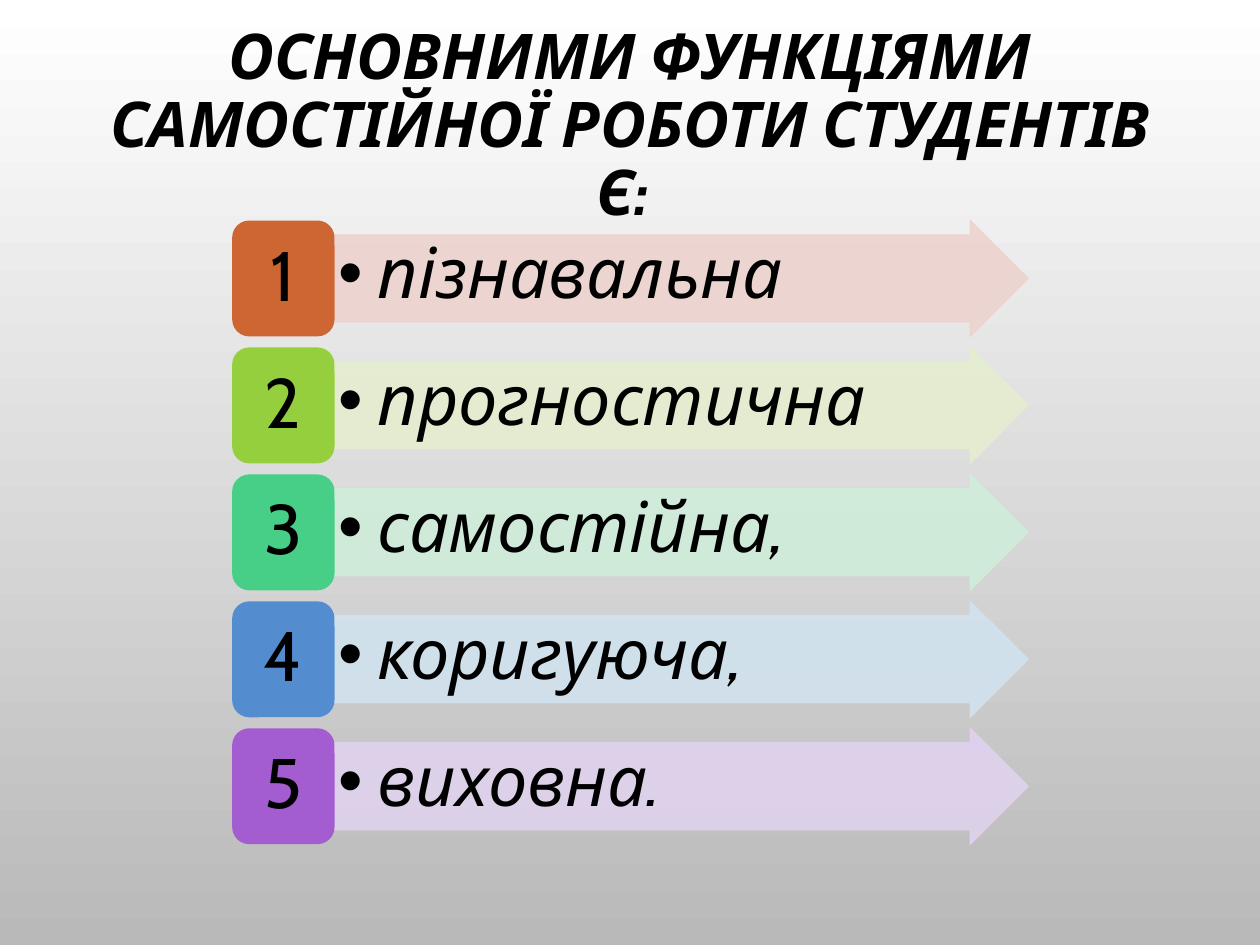
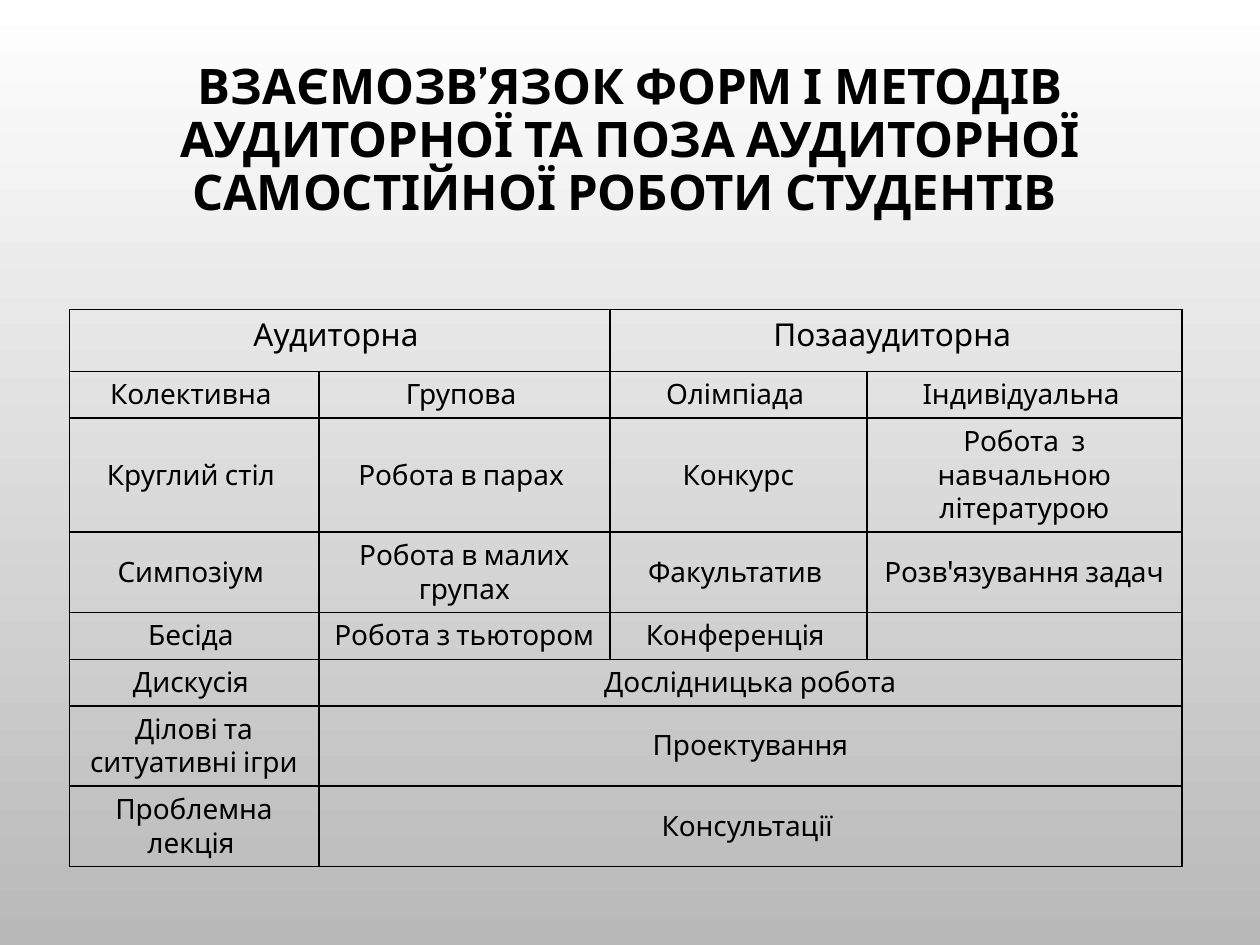
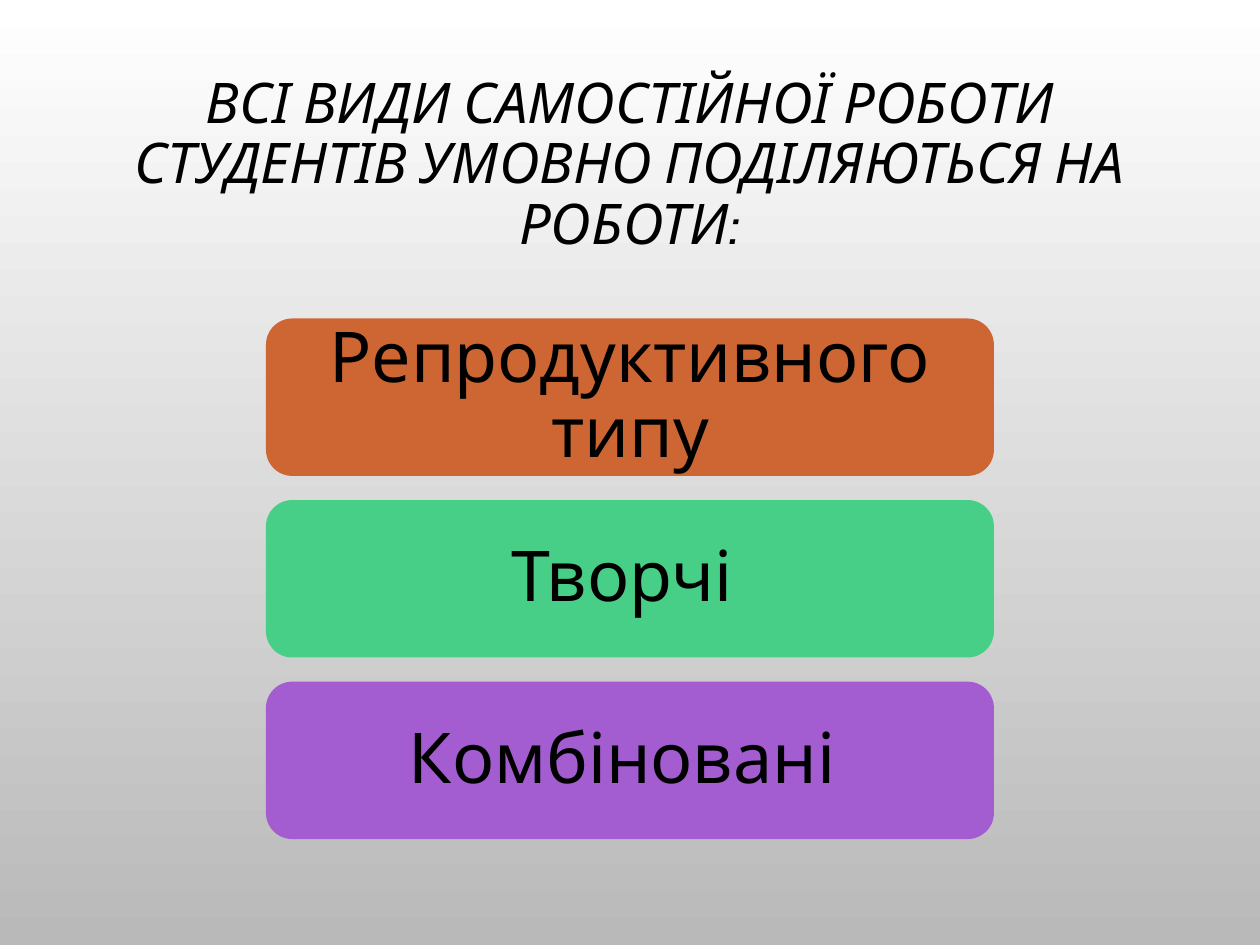
from collections import namedtuple

from lxml.etree import SubElement
from pptx import Presentation
from pptx.dml.color import RGBColor
from pptx.enum.shapes import MSO_SHAPE
from pptx.enum.text import MSO_ANCHOR, MSO_AUTO_SIZE, PP_ALIGN
from pptx.oxml.ns import qn
from pptx.util import Pt

Box = namedtuple("Box", "left top width height")

BLACK = RGBColor(0x00, 0x00, 0x00)
WHITE = RGBColor(0xFF, 0xFF, 0xFF)
GREY = RGBColor(0xB9, 0xB9, 0xB9)
ORANGE = RGBColor(0xCE, 0x66, 0x33)
LIME = RGBColor(0x95, 0xCF, 0x3E)
GREEN = RGBColor(0x48, 0xCF, 0x87)
BLUE = RGBColor(0x53, 0x8D, 0xD0)
PURPLE = RGBColor(0xA3, 0x5D, 0xD1)
PALE_ORANGE = RGBColor(0xED, 0xD3, 0xCE)
PALE_LIME = RGBColor(0xE5, 0xED, 0xCF)
PALE_GREEN = RGBColor(0xD0, 0xED, 0xDA)
PALE_BLUE = RGBColor(0xD1, 0xE2, 0xEE)
PALE_PURPLE = RGBColor(0xE0, 0xD2, 0xEE)

FONT = "Cabin"
TITLE_LAYOUT = 5
BULLET_INDENT = Pt(22.5)

FUNCTIONS = [
    ("пізнавальна", ORANGE, PALE_ORANGE),
    ("прогностична", LIME, PALE_LIME),
    ("самостійна,", GREEN, PALE_GREEN),
    ("коригуюча,", BLUE, PALE_BLUE),
    ("виховна.", PURPLE, PALE_PURPLE),
]
WORK_TYPES = [
    ("Репродуктивного типу", ORANGE),
    ("Творчі ", GREEN),
    ("Комбіновані ", PURPLE),
]
FORMS = [
    ["Аудиторна ", None, "Позааудиторна ", None],
    ["Колективна ", "Групова ", "Олімпіада ", "Індивідуальна "],
    ["Круглий стіл ", "Робота в парах ", "Конкурс", "Робота  з навчальною літературою"],
    ["Симпозіум ", "Робота в малих групах", "Факультатив ", "Розв'язування задач"],
    ["Бесіда ", "Робота з тьютором", "Конференція ", ""],
    ["Дискусія ", "Дослідницька робота", None, None],
    ["Ділові та ситуативні ігри", "Проектування", None, None],
    ["Проблемна лекція ", "Консультації ", None, None],
]
FORM_WIDTHS = [142.6, 166.3, 146.9, 180]
FORM_HEIGHTS = [35.3, 21.6, 35.3, 35.3, 21.6, 23.8, 35.3, 35.3]


def apply(target, **formats):
    for name, value in formats.items():
        setattr(target, name, value)


def points(box):
    return [Pt(length) for length in box]


def margins(across, down):
    return dict(margin_left=Pt(across), margin_right=Pt(across),
                margin_top=Pt(down), margin_bottom=Pt(down))


def write(frame, text, size, align=PP_ALIGN.CENTER, spacing=0.9, **style):
    paragraph = frame.paragraphs[0]
    apply(paragraph, alignment=align, line_spacing=spacing)
    run = paragraph.add_run()
    run.text = text
    apply(run.font, name=FONT, size=Pt(size), **style)
    run.font.color.rgb = BLACK


def add_block(slide, preset, box, color):
    block = slide.shapes.add_shape(preset, *points(box))
    block.shadow.inherit = False
    block.fill.solid()
    block.fill.fore_color.rgb = color
    block.line.fill.background()
    return block


def add_badge(slide, box, text, color, inset):
    badge = add_block(slide, MSO_SHAPE.ROUNDED_RECTANGLE, box, color)
    apply(badge.text_frame, word_wrap=True,
          vertical_anchor=MSO_ANCHOR.MIDDLE, **margins(12, inset))
    write(badge.text_frame, text, 40)


def add_function_arrow(slide, box, text, color):
    arrow = add_block(slide, MSO_SHAPE.RIGHT_ARROW, box, color)
    arrow.adjustments[0] = 0.75
    arrow.line.color.rgb = color
    arrow.line.width = Pt(0.75)
    for tint in arrow._element.spPr.iter(qn("a:srgbClr")):
        SubElement(tint, qn("a:alpha"), val="90000")
    apply(arrow.text_frame, word_wrap=True,
          vertical_anchor=MSO_ANCHOR.TOP, **margins(2, 2))
    properties = arrow.text_frame.paragraphs[0]._p.get_or_add_pPr()
    properties.set("marL", str(BULLET_INDENT))
    properties.set("indent", str(-BULLET_INDENT))
    SubElement(properties, qn("a:buFont"), typeface="Arial")
    SubElement(properties, qn("a:buChar"), char="•")
    write(arrow.text_frame, text, 40, PP_ALIGN.LEFT, italic=True)


def stacked(box, count, gap):
    height = (box.height - gap * (count - 1)) / count
    for index in range(count):
        yield box._replace(top=box.top + index * (height + gap), height=height)


def add_functions(slide, box):
    badge_width = 58.5
    rows = stacked(box, len(FUNCTIONS), 6.3)
    for number, (row, (text, color, pale)) in enumerate(zip(rows, FUNCTIONS), 1):
        arrow_box = row._replace(left=row.left + badge_width,
                                 width=row.width - badge_width)
        add_function_arrow(slide, arrow_box, text, pale)
        add_badge(slide, row._replace(width=badge_width), str(number), color, 6)


def add_work_types(slide, box):
    for row, (text, color) in zip(stacked(box, len(WORK_TYPES), 13.8), WORK_TYPES):
        add_badge(slide, row, text, color, 12)


def add_cell_borders(cell):
    properties = cell._tc.get_or_add_tcPr()
    for position, side in enumerate(("lnL", "lnR", "lnT", "lnB")):
        border = properties.makeelement(qn("a:" + side), {"w": str(Pt(1))})
        properties.insert(position, border)
        fill = SubElement(border, qn("a:solidFill"))
        SubElement(fill, qn("a:srgbClr"), val=str(BLACK))


def add_forms_table(slide, box):
    table = slide.shapes.add_table(len(FORMS), len(FORM_WIDTHS), *points(box)).table
    apply(table, first_row=False, horz_banding=False)
    for column, width in zip(table.columns, FORM_WIDTHS):
        column.width = Pt(width)
    for row, height in zip(table.rows, FORM_HEIGHTS):
        row.height = Pt(height)
    for r, texts in enumerate(FORMS):
        size = 16 if r else 18
        for c, text in enumerate(texts):
            cell = table.cell(r, c)
            cell.fill.background()
            add_cell_borders(cell)
            cell.vertical_anchor = MSO_ANCHOR.MIDDLE if r else MSO_ANCHOR.TOP
            if text:
                write(cell.text_frame, text, size, spacing=1.0)
                last = c
                while last + 1 < len(texts) and texts[last + 1] is None:
                    last += 1
                if last > c:
                    cell.merge(table.cell(r, last))
            elif text == "":
                ending = SubElement(cell.text_frame.paragraphs[0]._p, qn("a:endParaRPr"))
                ending.set("sz", str(size * 100))


def add_titled_slide(deck, title_top, text, size, **style):
    slide = deck.slides.add_slide(deck.slide_layouts[TITLE_LAYOUT])
    title = slide.shapes.title
    place = zip(Box._fields, points(Box(54, title_top, 612, 126)))
    apply(title, **dict(place))
    apply(title.text_frame, word_wrap=True, auto_size=MSO_AUTO_SIZE.NONE,
          vertical_anchor=MSO_ANCHOR.MIDDLE)
    write(title.text_frame, text, size, **style)
    return slide


def set_background(deck):
    fill = deck.slide_master.background.fill
    fill.gradient()
    fill.gradient_angle = 270
    for stop, position, color in zip(fill.gradient_stops, (0, 1), (WHITE, GREY)):
        stop.position = position
        stop.color.rgb = color


def main():
    deck = Presentation()
    apply(deck, slide_width=Pt(720), slide_height=Pt(540))
    set_background(deck)

    functions = add_titled_slide(
        deck, 9.4, "ОСНОВНИМИ ФУНКЦІЯМИ САМОСТІЙНОЇ РОБОТИ СТУДЕНТІВ Є: ",
        36, bold=True, italic=True)
    add_functions(functions, Box(132.7, 126, 454.8, 356.4))

    forms = add_titled_slide(
        deck, 18,
        "ВЗАЄМОЗВ’ЯЗОК ФОРМ І МЕТОДІВ АУДИТОРНОЇ ТА ПОЗА АУДИТОРНОЇ "
        "САМОСТІЙНОЇ РОБОТИ СТУДЕНТІВ ", 28, bold=True)
    add_forms_table(forms, Box(39.6, 177, 635.8, 243.5))

    work_types = add_titled_slide(
        deck, 31.7,
        "ВСІ ВИДИ САМОСТІЙНОЇ РОБОТИ СТУДЕНТІВ УМОВНО ПОДІЛЯЮТЬСЯ НА РОБОТИ:",
        32, bold=False, italic=True)
    add_work_types(work_types, Box(152, 182, 416, 297.5))

    deck.save("out.pptx")


if __name__ == "__main__":
    main()
